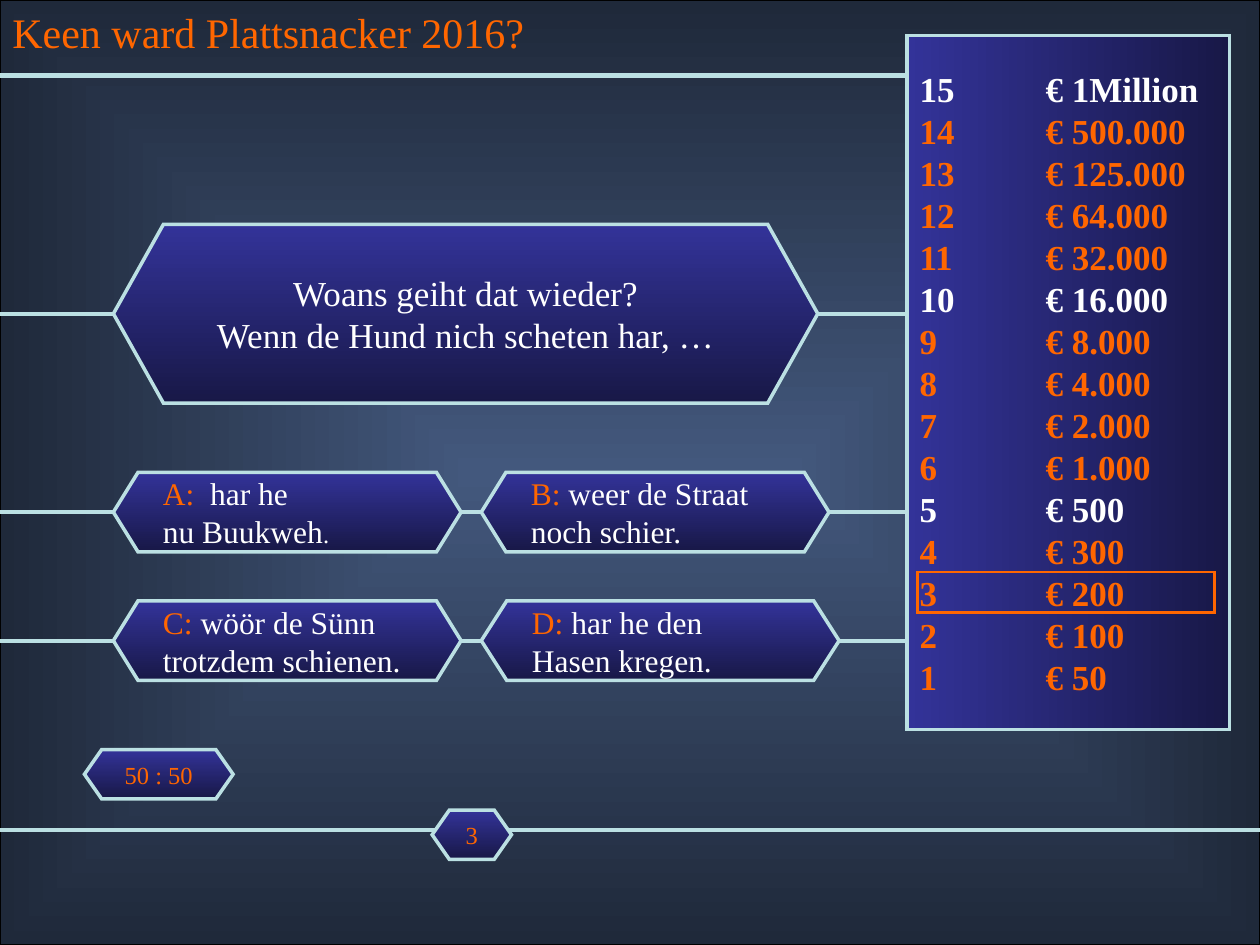
"""Quiz show slide with a question, four answers and a prize ladder."""
from lxml import etree
from pptx import Presentation
from pptx.dml.color import RGBColor
from pptx.enum.shapes import MSO_CONNECTOR, MSO_SHAPE
from pptx.enum.text import MSO_ANCHOR, MSO_AUTO_SIZE, PP_ALIGN
from pptx.oxml import parse_xml
from pptx.oxml.ns import nsdecls, qn
from pptx.util import Inches, Pt

RECT, HEXAGON = MSO_SHAPE.RECTANGLE, MSO_SHAPE.HEXAGON
LEFT, CENTER = PP_ALIGN.LEFT, PP_ALIGN.CENTER
COLORS = {"slate": "43587D", "dark slate": "1F293A", "navy": "333399",
          "dark navy": "181847", "edge": "BBE0E3", "orange": "FF6600",
          "white": "FFFFFF", "black": "000000"}
DOWN = '<a:lin ang="5400000" scaled="1"/>'
ACROSS = '<a:lin ang="0" scaled="1"/>'
FROM_CENTER = ('<a:path path="rect"><a:fillToRect l="50000" t="50000" '
               'r="50000" b="50000"/></a:path>')


def add_box(kind, box, color, direction, line, width):
    sp = slide.shapes.add_shape(kind, *(Inches(v) for v in box))
    sp.shadow.inherit = False
    sp.line.color.rgb = RGBColor.from_string(COLORS[line])
    sp.line.width = Pt(width)
    ln = sp._element.spPr.find(qn("a:ln"))
    etree.SubElement(ln, qn("a:miter"), lim="800000")
    sp.fill.background()
    if color:
        no_fill = sp._element.spPr.find(qn("a:noFill"))
        sp._element.spPr.replace(no_fill, parse_xml(
            f'<a:gradFill {nsdecls("a")} rotWithShape="0"><a:gsLst>'
            f'<a:gs pos="0"><a:srgbClr val="{COLORS[color]}"/></a:gs>'
            f'<a:gs pos="100000"><a:srgbClr val="{COLORS["dark " + color]}"/></a:gs>'
            f'</a:gsLst>{direction}</a:gradFill>'))
    return sp


def add_text(sp, lines, align=LEFT, bold=False):
    tf = sp.text_frame
    tf.word_wrap = False
    tf.vertical_anchor = MSO_ANCHOR.MIDDLE
    for i, runs in enumerate(lines):
        p = tf.add_paragraph() if i else tf.paragraphs[0]
        p.alignment = align
        for text, size, color in runs:
            r = p.add_run()
            r.text = text
            r.font.name = "Times New Roman"
            r.font.size = Pt(size)
            r.font.bold = bold
            r.font.color.rgb = RGBColor.from_string(COLORS[color])


prs = Presentation()
prs.slide_width, prs.slide_height = Inches(10), Inches(7.5)
slide = prs.slides.add_slide(prs.slide_layouts[6])

add_box(RECT, (0, 0, 10, 7.5), "slate", FROM_CENTER, "black", 0.75)

for x, y, width in [(0, 6.59, 2.25), (-0.48, 5.09, 2.25), (-0.49, 4.06, 2.25),
                    (-0.57, 2.49, 2.25), (-0.28, 0.6, 3)]:
    line = slide.shapes.add_connector(MSO_CONNECTOR.STRAIGHT, Inches(x), Inches(y),
                                      Inches(x + 10), Inches(y))
    line.line.color.rgb = RGBColor.from_string(COLORS["edge"])
    line.line.width = Pt(width)
    etree.SubElement(line._element.spPr, qn("a:effectLst"))

question = [[("Woans geiht dat wieder?", 20, "white")],
            [("Wenn de Hund nich scheten har, …", 20, "white")]]
answers = [
    (0.9, 3.75, 2.76, 0.31, "A:  ", "har he", [("nu Buukweh", 18, "white"), (".", 14, "white")]),
    (3.82, 3.75, 2.76, 0.31, "B: ", "weer de Straat", [("noch schier.", 18, "white")]),
    (0.9, 4.77, 2.76, 0.31, "C: ", "wöör de Sünn", [("trotzdem schienen.", 18, "white")]),
    (3.82, 4.77, 2.84, 0.32, "D: ", "har he den", [("Hasen kregen.", 18, "white")]),
]
hexagons = [((0.9, 1.78, 5.59, 1.42), 0.28, question, CENTER)]
for x, y, w, adj, letter, first, second in answers:
    lines = [[(letter, 18, "orange"), (first, 18, "white")], second]
    hexagons.append(((x, y, w, 0.63), adj, lines, LEFT))
hexagons += [((3.43, 6.43, 0.63, 0.39), 0.35, [[("3", 14, "orange")]], CENTER),
             ((0.67, 5.95, 1.18, 0.39), 0.35, [[("50 : 50", 14, "orange")]], CENTER)]
for box, adj, lines, align in hexagons:
    sp = add_box(HEXAGON, box, "navy", DOWN, "edge", 2)
    sp.adjustments[0] = adj
    add_text(sp, lines, align)

prizes = ["50", "100", "200", "300", "500", "1.000", "2.000", "4.000", "8.000", "16.000",
          "32.000", "64.000", "125.000", "500.000", "1Million"]
ladder = [[(f"{n}\t€ {prize}", 20, "orange" if n % 5 else "white")]
          for n, prize in enumerate(prizes, 1)]
panel = add_box(RECT, (7.2, 0.28, 2.56, 5.51), "navy", ACROSS, "edge", 2)
add_text(panel, ladder[::-1], bold=True)
for p in panel.text_frame.paragraphs:
    p._p.get_or_add_pPr().append(parse_xml(
        f'<a:tabLst {nsdecls("a")}><a:tab pos="{Inches(1)}" algn="l"/></a:tabLst>'))
add_box(RECT, (7.28, 4.54, 2.36, 0.32), None, None, "orange", 1.5)

title = slide.shapes.add_textbox(0, 0, Inches(5.12), Inches(0.5))
add_text(title, [[("Keen ward Plattsnacker 2016?", 24, "orange")]])
tf = title.text_frame
tf.word_wrap = True
tf.vertical_anchor = MSO_ANCHOR.TOP
tf.auto_size = MSO_AUTO_SIZE.SHAPE_TO_FIT_TEXT
tf.paragraphs[0]._p.get_or_add_pPr().append(parse_xml(
    f'<a:spcBef {nsdecls("a")}><a:spcPct val="50000"/></a:spcBef>'))

prs.save("out.pptx")
